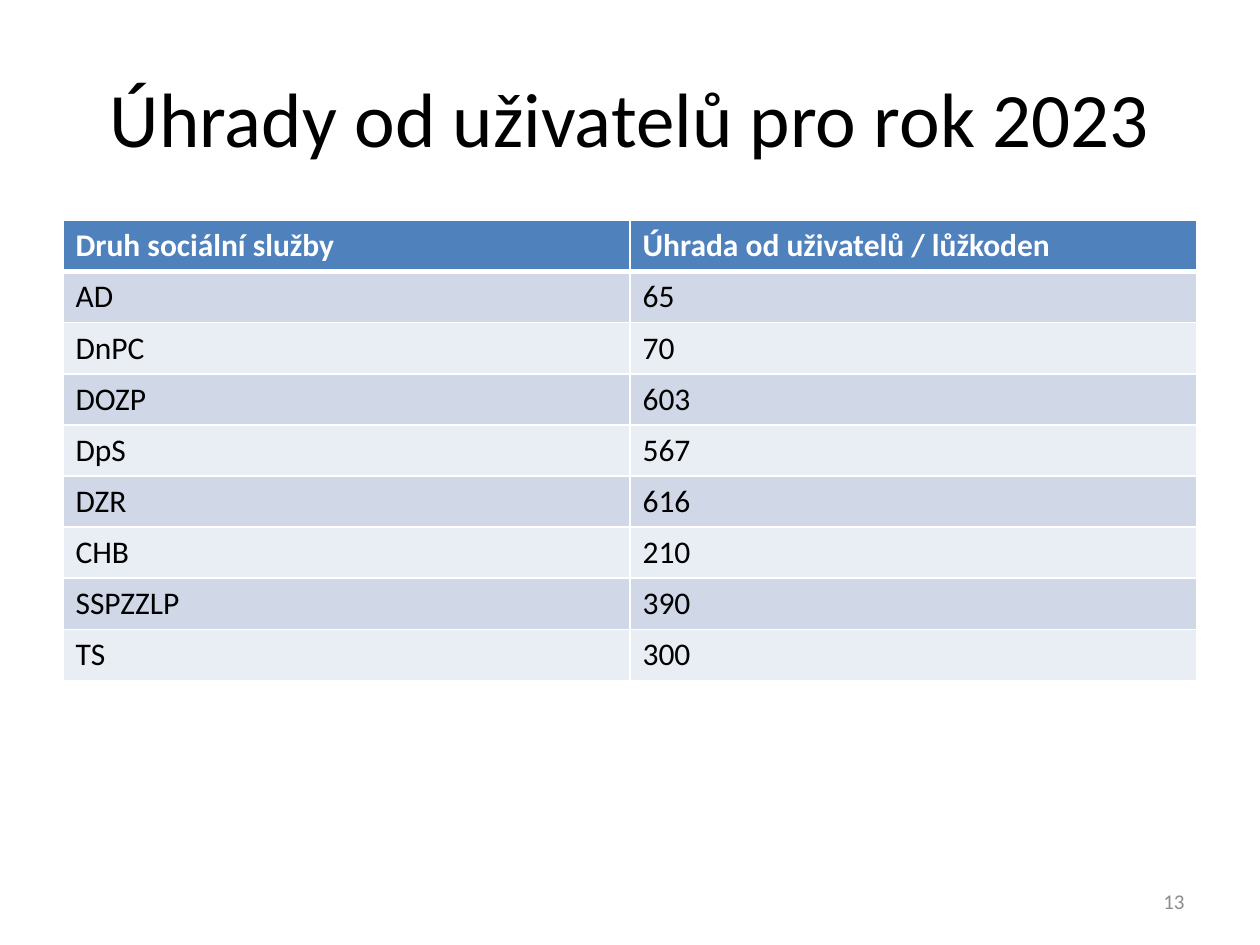
from lxml import etree
from pptx import Presentation
from pptx.dml.color import RGBColor
from pptx.enum.text import MSO_ANCHOR, PP_ALIGN
from pptx.oxml.ns import qn
from pptx.util import Inches, Pt

MIDDLE = MSO_ANCHOR.MIDDLE
CENTER, RIGHT = PP_ALIGN.CENTER, PP_ALIGN.RIGHT

FONT = "Calibri"
COLORS = {
    "text": "000000",
    "white": "FFFFFF",
    "number": "8C8C8C",
    "header": "4F81BD",
    "band_dark": "D0D8E8",
    "band_light": "E9EDF4",
}
ROWS = [
    ("Druh sociální služby", "Úhrada od uživatelů / lůžkoden"),
    ("AD", "65"),
    ("DnPC", "70"),
    ("DOZP", "603"),
    ("DpS", "567"),
    ("DZR", "616"),
    ("CHB", "210"),
    ("SSPZZLP", "390"),
    ("TS", "300"),
]


def rgb(name):
    return RGBColor.from_string(COLORS[name])


def format_paragraph(p, size, color, bold=False):
    for r in p.runs:
        r.font.name = FONT
        r.font.size = Pt(size)
        r.font.bold = bold
        r.font.color.rgb = rgb(color)


def add_text(slide, text, left, top, width, height, size, color, align):
    box = slide.shapes.add_textbox(Inches(left), Inches(top), Inches(width), Inches(height))
    tf = box.text_frame
    tf.word_wrap = True
    tf.vertical_anchor = MIDDLE
    tf.text = text
    p = tf.paragraphs[0]
    p.alignment = align
    format_paragraph(p, size, color)


def set_borders(cell, **widths):
    """Draw white cell borders; widths are points keyed by L, R, T, B."""
    tc_pr = cell._tc.get_or_add_tcPr()
    for index, side in enumerate("LRTB"):
        ln = etree.Element(qn("a:ln" + side), w=str(Pt(widths.get(side, 1))))
        fill = etree.SubElement(ln, qn("a:solidFill"))
        etree.SubElement(fill, qn("a:srgbClr"), val=COLORS["white"])
        tc_pr.insert(index, ln)


def fill_cell(cell, text, row):
    cell.text = text
    cell.fill.solid()
    p = cell.text_frame.paragraphs[0]
    if row == 0:
        cell.fill.fore_color.rgb = rgb("header")
        format_paragraph(p, 18, "white", bold=True)
        set_borders(cell, B=3)
    else:
        cell.fill.fore_color.rgb = rgb("band_dark" if row % 2 else "band_light")
        format_paragraph(p, 18, "text")
        set_borders(cell, T=3 if row == 1 else 1)


def add_fee_table(slide):
    frame = slide.shapes.add_table(
        len(ROWS), len(ROWS[0]), Inches(0.5), Inches(1.75), Inches(9), Inches(3.65)
    )
    for row, values in enumerate(ROWS):
        for col, text in enumerate(values):
            fill_cell(frame.table.cell(row, col), text, row)


def main():
    prs = Presentation()
    prs.slide_width, prs.slide_height = Inches(10), Inches(7.5)
    slide = prs.slides.add_slide(prs.slide_layouts[6])
    add_text(slide, "Úhrady od uživatelů pro rok 2023", 0.5, 0.3, 9, 1.25, 44, "text", CENTER)
    add_fee_table(slide)
    add_text(slide, "13", 7.17, 6.95, 2.33, 0.4, 12, "number", RIGHT)
    prs.save("out.pptx")


if __name__ == "__main__":
    main()
